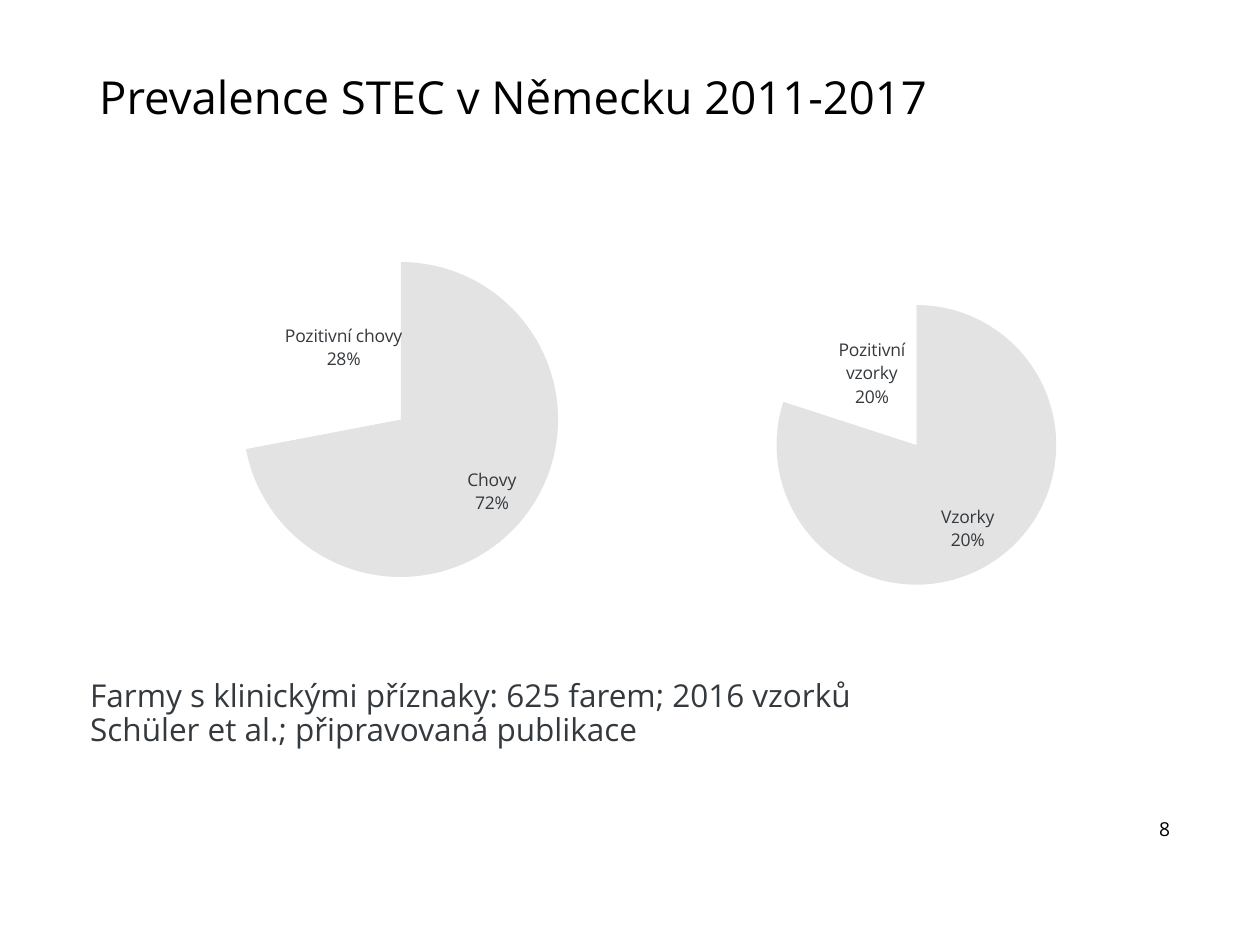
from pptx import Presentation
from pptx.chart.data import CategoryChartData
from pptx.dml.color import RGBColor
from pptx.enum.chart import XL_CHART_TYPE as ChartType, XL_LABEL_POSITION as LabelPos
from pptx.enum.text import MSO_ANCHOR as Anchor
from pptx.oxml import parse_xml
from pptx.oxml.ns import nsdecls
from pptx.util import Cm, Pt

FONT = "Open Sans"
COLORS = {"title": "000000", "text": "34393E", "all": "E3E3E3", "positive": "FFFFFF"}


def rgb(name):
    return RGBColor.from_string(COLORS[name])


def style(font, size, color):
    font.name = FONT
    font.size = Pt(size)
    font.bold = False
    font.color.rgb = rgb(color)


def add_text(s, box, lines, size, color, inset=True, spacing=None, anchor=Anchor.TOP):
    tf = s.shapes.add_textbox(*map(Cm, box)).text_frame
    tf.word_wrap = True
    tf.vertical_anchor = anchor
    if not inset:
        tf.margin_left = tf.margin_right = tf.margin_top = tf.margin_bottom = 0
    tf.text = "\n".join(lines)
    for p in tf.paragraphs:
        style(p.font, size, color)
        p.line_spacing = spacing


def set_plot_area(chart, x, y, w, h):
    plot_area = chart.plots[0]._element.getparent()
    for old in plot_area.findall("{*}layout"):
        plot_area.remove(old)
    values = "".join(f'<c:{k} val="{v}"/>' for k, v in zip("xywh", (x, y, w, h)))
    plot_area.insert(0, parse_xml(
        f'<c:layout {nsdecls("c")}><c:manualLayout><c:layoutTarget val="inner"/>'
        f'<c:xMode val="edge"/><c:yMode val="edge"/>{values}</c:manualLayout></c:layout>'))


def add_pie(s, box, plot_box, categories, values, labels):
    data = CategoryChartData()
    data.categories = categories
    data.add_series("Series 1", values)
    chart = s.shapes.add_chart(ChartType.PIE, *map(Cm, box), data).chart
    chart.has_legend = False
    chart.has_title = False
    style(chart.font, 10, "text")
    set_plot_area(chart, *plot_box)
    plot = chart.plots[0]
    plot.vary_by_categories = True
    for i, (color, label) in enumerate(zip(("all", "positive"), labels)):
        point = plot.series[0].points[i]
        point.format.fill.solid()
        point.format.fill.fore_color.rgb = rgb(color)
        point.format.line.fill.background()
        tf = point.data_label.text_frame
        tf.text = label
        for p in tf.paragraphs:
            style(p.font, 10, "text")
            for r in p.runs:
                style(r.font, 10, "text")
        point.data_label.position = LabelPos.INSIDE_END


def main():
    prs = Presentation()
    prs.slide_width, prs.slide_height = Cm(25.4), Cm(19.05)
    s = prs.slides.add_slide(prs.slide_layouts[6])
    add_text(s, (23.37, 16.46, 0.99, 0.48), ["8"], 11, "title",
             inset=False, anchor=Anchor.MIDDLE)
    add_text(s, (1.75, 1.4, 22.15, 1.7), ["Prevalence STEC v Německu 2011-2017"], 26, "title",
             spacing=0.9)
    add_text(s, (1.57, 13.59, 21.34, 1.8),
             ["Farmy s klinickými příznaky: 625 farem; 2016 vzorků",
              "Schüler et al.; připravovaná publikace"], 18, "text", spacing=0.9)
    add_pie(s, (0.71, 4.42, 12.7, 7.62), (0.33, 0.11, 0.5, 0.84),
            ["Farms", "positive Farms"], (72, 28),
            ["Chovy\n72%", "Pozitivní chovy\n28%"])
    add_pie(s, (11.68, 4.55, 12.7, 7.62), (0.31, 0.21, 0.45, 0.74),
            ["Samples", "positive samples"], (80, 20),
            ["Vzorky\n20%", "Pozitivní vzorky\n20%"])
    prs.save("out.pptx")


if __name__ == "__main__":
    main()
